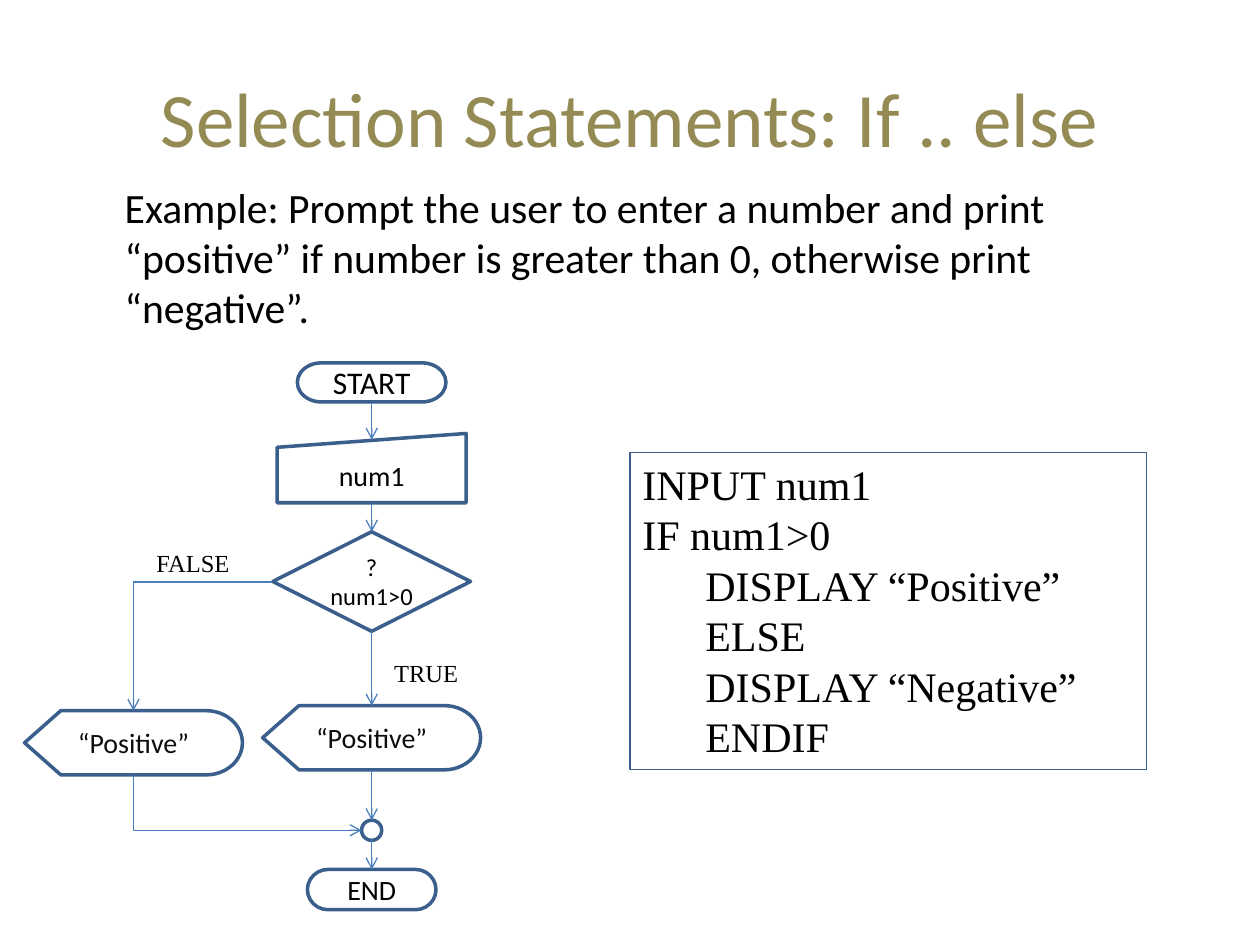
from pptx import Presentation
from pptx import util as u
from pptx.dml.color import RGBColor
from pptx.enum import shapes, text
from pptx.oxml.ns import qn
from lxml import etree

OLIVE = RGBColor(0x94, 0x8A, 0x54)
NAVY = RGBColor(0x3A, 0x5F, 0x8C)
BLUE = RGBColor(0x4B, 0x7E, 0xBC)
BLACK = RGBColor(0, 0, 0)
CHARCOAL = RGBColor(0x0D, 0x0D, 0x0D)
SANS, SERIF = "Calibri", "Times New Roman"
KIND = shapes.MSO_SHAPE
ALIGN = text.PP_ALIGN


class FlowSlide:
    """Draws a flowchart slide in one shared style."""

    def __init__(self, deck):
        self.slide = deck.slides.add_slide(deck.slide_layouts[1])

    def add_words(self, paragraph, words, size, font=SANS, color=BLACK, align=ALIGN.LEFT):
        paragraph.alignment = align
        run = paragraph.add_run()
        run.text = words
        run.font.size = u.Pt(size)
        run.font.name = font
        run.font.color.rgb = color

    def indent(self, paragraph, inches):
        properties = paragraph._p.get_or_add_pPr()
        properties.set("marL", str(u.Inches(inches)))
        properties.set("indent", "0")
        return properties

    def placeholder(self, index, box):
        holder = self.slide.placeholders[index]
        holder.left, holder.top, holder.width, holder.height = map(u.Inches, box)
        holder.text_frame.auto_size = text.MSO_AUTO_SIZE.NONE
        return holder.text_frame.paragraphs[0]

    def title(self, words, box):
        self.add_words(self.placeholder(0, box), words, 44, color=OLIVE, align=ALIGN.CENTER)

    def body(self, words, box):
        paragraph = self.placeholder(1, box)
        etree.SubElement(self.indent(paragraph, 0.38), qn("a:buNone"))
        self.add_words(paragraph, words, 23.8)

    def outline(self, kind, box, weight):
        shape = self.slide.shapes.add_shape(kind, *map(u.Inches, box))
        shape.shadow.inherit = False
        shape.fill.background()
        shape.line.color.rgb = NAVY
        shape.line.width = u.Pt(weight)
        return shape

    def symbol(self, kind, center, top, width, height, words="", size=16, color=BLACK, inset=0.1):
        shape = self.outline(kind, (center - width / 2, top, width, height), 2)
        if words:
            frame = shape.text_frame
            frame.margin_left = frame.margin_right = u.Inches(inset)
            frame.vertical_anchor = text.MSO_ANCHOR.MIDDLE
            self.add_words(frame.paragraphs[0], words, size, color=color, align=ALIGN.CENTER)

    def label(self, words, left, top, align):
        frame = self.slide.shapes.add_textbox(*map(u.Inches, (left, top, 0.94, 0.34))).text_frame
        frame.word_wrap = True
        self.add_words(frame.paragraphs[0], words, 14, SERIF, align=align)

    def code(self, lines, box):
        frame = self.outline(KIND.RECTANGLE, box, 0.75).text_frame
        frame.vertical_anchor = text.MSO_ANCHOR.TOP
        for number, (words, inches) in enumerate(lines):
            paragraph = frame.add_paragraph() if number else frame.paragraphs[0]
            self.indent(paragraph, inches)
            self.add_words(paragraph, words, 24, SERIF)

    def arrow(self, begin, end, bent=False, arrowhead="tailEnd"):
        style = shapes.MSO_CONNECTOR.ELBOW if bent else shapes.MSO_CONNECTOR.STRAIGHT
        link = self.slide.shapes.add_connector(style, *map(u.Inches, begin + end))
        link.line.color.rgb = BLUE
        link.line.width = u.Pt(0.75)
        properties = link._element.spPr
        if bent:
            properties.find(qn("a:prstGeom")).set("prst", "bentConnector2")
        etree.SubElement(properties.find(qn("a:ln")), qn("a:" + arrowhead), type="arrow")
        etree.SubElement(properties, qn("a:effectLst"))


def main():
    deck = Presentation()
    deck.slide_width, deck.slide_height = u.Inches(10), u.Inches(7.5)
    flow = FlowSlide(deck)
    flow.title("Selection Statements: If .. else", (0.5, 0.3, 9, 1.25))
    flow.body(
        "Example: Prompt the user to enter a number and print “positive” "
        "if number is greater than 0, otherwise print “negative”.",
        (0.51, 1.39, 9, 1.13),
    )

    main_x, false_x = 2.95, 1.06
    flow.symbol(KIND.FLOWCHART_TERMINATOR, main_x, 2.88, 1.18, 0.31, "START", 18)
    flow.symbol(KIND.FLOWCHART_MANUAL_INPUT, main_x, 3.44, 1.5, 0.55, "num1")
    flow.symbol(KIND.FLOWCHART_DECISION, main_x, 4.22, 1.57, 0.79, "? num1>0", 14, inset=0)
    for center, top in ((main_x, 5.6), (false_x, 5.64)):
        flow.symbol(KIND.FLOWCHART_DISPLAY, center, top, 1.73, 0.51, "“Positive”", color=CHARCOAL)
    flow.symbol(KIND.FLOWCHART_CONNECTOR, main_x, 6.51, 0.16, 0.16)
    flow.symbol(KIND.FLOWCHART_TERMINATOR, main_x, 6.9, 1.02, 0.32, "END")

    for start, stop in ((3.2, 3.49), (3.99, 4.22), (5.01, 5.6), (6.11, 6.51), (6.66, 6.9)):
        flow.arrow((main_x, start), (main_x, stop))
    flow.arrow((2.16, 4.62), (false_x, 5.64), bent=True)
    flow.arrow((2.87, 6.59), (false_x, 6.15), bent=True, arrowhead="headEnd")
    flow.label("TRUE", 3.03, 5.17, ALIGN.LEFT)
    flow.label("FALSE", 0.98, 4.3, ALIGN.RIGHT)

    flow.code(
        (
            ("INPUT num1", 0),
            ("IF num1>0", 0),
            ("DISPLAY “Positive”", 0.5),
            ("ELSE", 0.5),
            ("DISPLAY “Negative”", 0.5),
            ("ENDIF", 0.5),
        ),
        (5, 3.59, 4.1, 2.52),
    )
    deck.save("out.pptx")


if __name__ == "__main__":
    main()
